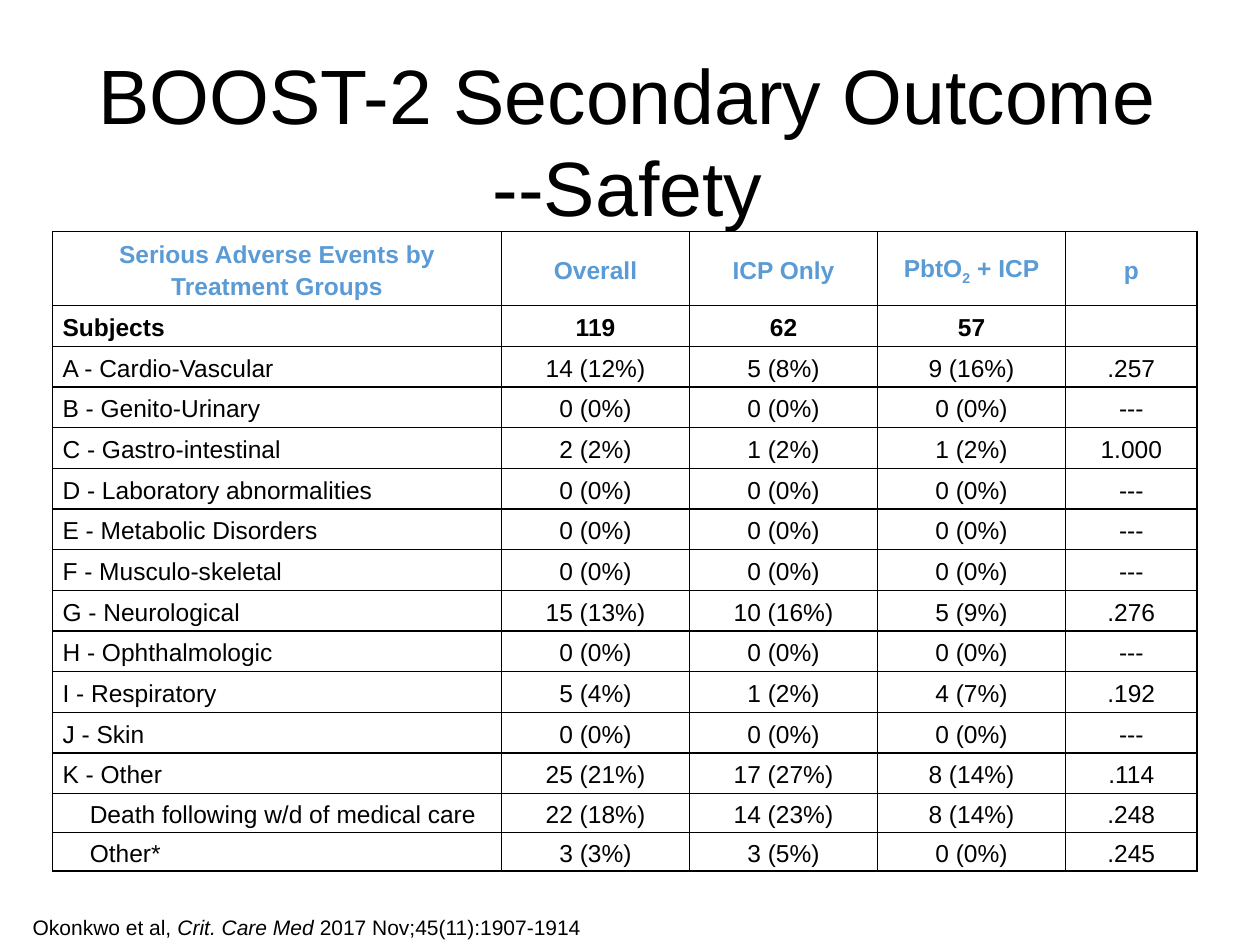
from lxml.etree import SubElement as Sub
from pptx import Presentation
from pptx.dml.color import RGBColor as RGB
from pptx.enum.text import MSO_ANCHOR as Anchor, MSO_AUTO_SIZE as Auto, PP_ALIGN as Align
from pptx.oxml.ns import qn
from pptx.util import Cm, Pt

BLACK, BLUE = "000000", "5B9BD5"
NONE = ["0 (0%)"] * 3 + ["---"]
HEAD = ["Serious Adverse Events by Treatment Groups", "Overall", "ICP Only",
        ["PbtO", ("2", {"sub": True}), " + ICP"], "p"]
ROWS = [
    ["Subjects", "119", "62", "57", ""],
    ["A - Cardio-Vascular", "14 (12%)", "5 (8%)", "9 (16%)", ".257"],
    ["B - Genito-Urinary", *NONE],
    ["C - Gastro-intestinal", "2 (2%)", "1 (2%)", "1 (2%)", "1.000"],
    ["D - Laboratory abnormalities", *NONE],
    ["E - Metabolic Disorders", *NONE],
    ["F - Musculo-skeletal", *NONE],
    ["G - Neurological", "15 (13%)", "10 (16%)", "5 (9%)", ".276"],
    ["H - Ophthalmologic", *NONE],
    ["I - Respiratory", "5 (4%)", "1 (2%)", "4 (7%)", ".192"],
    ["J - Skin", *NONE],
    ["K - Other", "25 (21%)", "17 (27%)", "8 (14%)", ".114"],
    ["Death following w/d of medical care", "22 (18%)", "14 (23%)", "8 (14%)", ".248"],
    ["Other*", "3 (3%)", "3 (5%)", "0 (0%)", ".245"],
]
SUBS = 2  # closing rows that break down "K - Other"
WIDTHS = [9.05, 3.79, 3.79, 3.79, 2.65]


def color(code):
    return RGB.from_string(code)


def put(item, **vals):
    for name, val in vals.items():
        setattr(item, name, val)


def write(para, text, size, code=BLACK, bold=False):
    """Fill a paragraph from a string, or a list of strings and (string, format) pairs."""
    for part in [text] if isinstance(text, str) else text:
        words, form = part if isinstance(part, tuple) else (part, {})
        run = para.add_run()
        run.text = words
        put(run.font, name="Arial", size=Pt(size), bold=bold, italic=form.get("italic", False))
        run.font.color.rgb = color(code)
        if form.get("sub"):
            run._r.get_or_add_rPr().set("baseline", "-25000")


def edge(cell):
    """Draw a thin black border on all four sides."""
    props = cell._tc.get_or_add_tcPr()
    for side in "LRTB":
        line = Sub(props, qn(f"a:ln{side}"), w=str(Pt(1)))
        fill = Sub(line, qn("a:solidFill"))
        Sub(fill, qn("a:srgbClr"), val=BLACK)


def add_title(slide):
    title = slide.shapes.title
    put(title, left=Cm(1.32), top=Cm(0.71), width=Cm(22.66), height=Cm(3.5))
    frame = title.text_frame
    put(frame, auto_size=Auto.NONE, word_wrap=True, vertical_anchor=Anchor.TOP,
        margin_top=Cm(0.25))
    lines = ["BOOST-2 Secondary Outcome", "--Safety"]
    for num, text in enumerate(lines):
        para = frame.add_paragraph() if num else frame.paragraphs[0]
        put(para, alignment=Align.CENTER, space_before=Pt(0))
        write(para, text, 44)


def add_cell(cell, text, row, col):
    last = col == len(WIDTHS) - 1
    side, rim = (Cm(0.18), Cm(0)) if last else (Cm(0.2), Cm(0.05))
    put(cell, vertical_anchor=Anchor.MIDDLE, margin_left=side, margin_right=side,
        margin_top=rim, margin_bottom=rim)
    edge(cell)
    cell.fill.background()
    if not text:
        return
    para = cell.text_frame.paragraphs[0]
    left = row and not col
    put(para, alignment=Align.LEFT if left else Align.CENTER, line_spacing=1.15)
    if left and row > len(ROWS) - SUBS:
        para._p.get_or_add_pPr().set("marL", str(Cm(0.55)))
    write(para, text, 14, BLACK if row else BLUE, bold=row < 2)


def add_grid(slide):
    data = [HEAD, *ROWS]
    tall = [1.49] + [0.82] * (len(ROWS) - SUBS) + [0.78] * SUBS
    table = slide.shapes.add_table(len(data), len(WIDTHS), Cm(1.06), Cm(4.67),
                                   Cm(sum(WIDTHS)), Cm(sum(tall))).table
    put(table, first_row=False, horz_banding=False)
    for col, width in zip(table.columns, WIDTHS):
        col.width = Cm(width)
    for row, high in zip(table.rows, tall):
        row.height = Cm(high)
    for row, texts in enumerate(data):
        for col, text in enumerate(texts):
            add_cell(table.cell(row, col), text, row, col)


def add_cite(slide):
    box = slide.shapes.add_textbox(Cm(0.41), Cm(18.31), Cm(11.99), Cm(0.74))
    box.text_frame.word_wrap = True
    write(box.text_frame.paragraphs[0],
          ["Okonkwo et al, ", ("Crit. Care Med", {"italic": True}),
           " 2017 Nov;45(11):1907-1914"], 12)


def main():
    deck = Presentation()
    put(deck, slide_width=Cm(25.4), slide_height=Cm(19.05))
    slide = deck.slides.add_slide(deck.slide_layouts[5])
    add_title(slide)
    add_grid(slide)
    add_cite(slide)
    deck.save("out.pptx")


if __name__ == "__main__":
    main()
